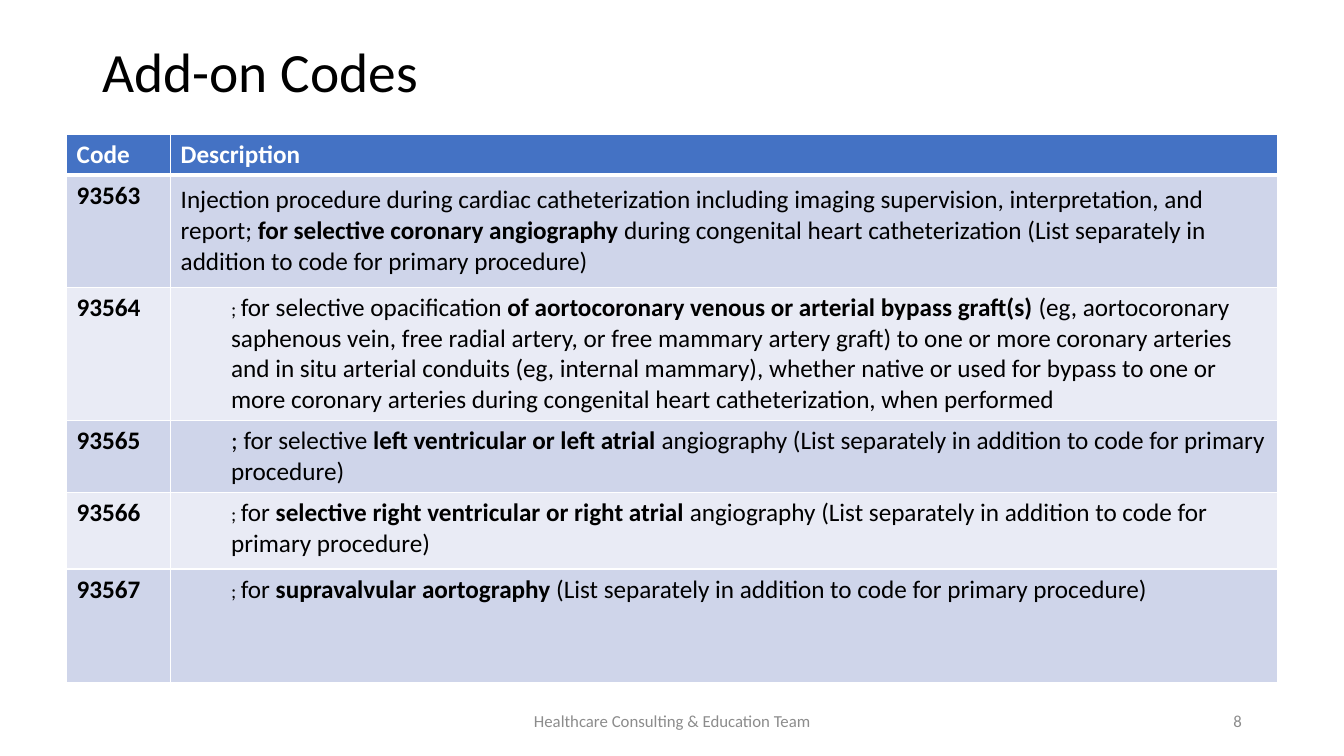
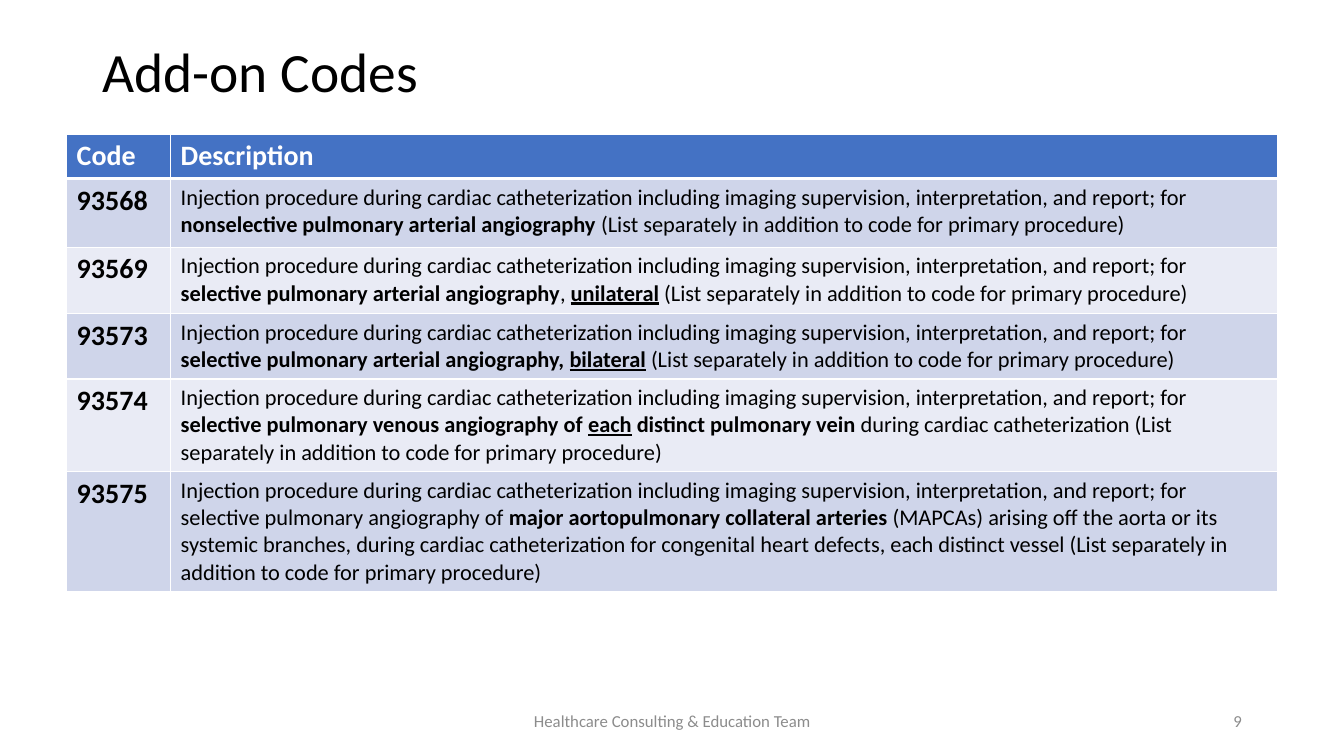
from dataclasses import dataclass

from lxml.etree import SubElement
from pptx import Presentation
from pptx.dml.color import RGBColor
from pptx.enum.text import MSO_ANCHOR, MSO_AUTO_SIZE, PP_ALIGN
from pptx.oxml.ns import qn
from pptx.slide import Slide
from pptx.table import _Cell
from pptx.text.text import _Paragraph
from pptx.util import Cm, Pt


@dataclass(frozen=True)
class Theme:
    font: str = "Calibri"
    ink: str = "000000"
    white: str = "FFFFFF"
    header: str = "4472C4"
    bands: tuple[str, str] = ("CFD5EA", "E9EBF5")
    muted: str = "8C8C8C"
    title_size: float = 39.6
    footer_size: float = 12
    separator_size: float = 14
    thin: float = 1
    thick: float = 3


@dataclass(frozen=True)
class Box:
    left: float
    top: float
    width: float
    height: float

    def lengths(self) -> tuple[Cm, Cm, Cm, Cm]:
        return Cm(self.left), Cm(self.top), Cm(self.width), Cm(self.height)


@dataclass(frozen=True)
class Phrase:
    text: str
    bold: bool = False
    underline: bool = False
    size: float | None = None


@dataclass(frozen=True)
class CodeEntry:
    code: str
    description: tuple[Phrase, ...]
    indent: float = 0
    padding: float = 0.13


@dataclass(frozen=True)
class CodePage:
    number: int
    code_size: float
    description_size: float
    entries: tuple[CodeEntry, ...]


THEME = Theme()

# Shared layout, in centimetres
SLIDE_WIDTH, SLIDE_HEIGHT = 33.87, 19.05
TITLE_BOX = Box(2.33, 1.02, 29.21, 1.7)
FOOTER_BOX = Box(11.23, 17.65, 11.43, 1.02)
NUMBER_BOX = Box(23.93, 17.65, 7.62, 1.02)
COLUMN_WIDTHS = (2.62, 27.89)
ROW_HEIGHTS = (0.97, 1.73, 1.68, 1.63, 1.93, 2.87)
TABLE_BOX = Box(1.68, 3.38, sum(COLUMN_WIDTHS), sum(ROW_HEIGHTS))
SUBENTRY_INDENT = 1.27

# Shared wording
TITLE = "Add-on Codes"
FOOTER = "Healthcare Consulting & Education Team"
HEADINGS = ("Code", "Description")
INJECTION = ("Injection procedure during cardiac catheterization including "
             "imaging supervision, interpretation, and report; ")
LISTED = "(List separately in addition to code for primary procedure)"
SEPARATOR = Phrase("; ", size=THEME.separator_size)


def subentry(code: str, *description: Phrase) -> CodeEntry:
    return CodeEntry(code, description, indent=SUBENTRY_INDENT)


def injection(code: str, lead: str, *description: Phrase) -> CodeEntry:
    return CodeEntry(code, (Phrase(INJECTION + lead), *description))


PAGES = (
    CodePage(8, 18, 18, (
        CodeEntry("93563", (
            Phrase(INJECTION),
            Phrase("for selective coronary angiography ", bold=True),
            Phrase("during congenital heart catheterization " + LISTED),
        ), padding=0.25),
        subentry(
            "93564", SEPARATOR, Phrase("for selective opacification "),
            Phrase("of aortocoronary venous or arterial bypass graft(s) ",
                   bold=True),
            Phrase("(eg, aortocoronary saphenous vein, free radial artery, or "
                   "free mammary artery graft) to one or more coronary "
                   "arteries and in situ arterial conduits (eg, internal "
                   "mammary), whether native or used for bypass to one or more "
                   "coronary arteries during congenital heart "
                   "catheterization, when performed")),
        subentry(
            "93565", Phrase("; for selective "),
            Phrase("left ventricular or left atrial ", bold=True),
            Phrase("angiography " + LISTED)),
        subentry(
            "93566", SEPARATOR, Phrase("for "),
            Phrase("selective right ventricular or right atrial ", bold=True),
            Phrase("angiography " + LISTED)),
        subentry(
            "93567", SEPARATOR, Phrase("for "),
            Phrase("supravalvular aortography ", bold=True), Phrase(LISTED)),
    )),
    CodePage(9, 20, 16, (
        injection(
            "93568", "for ",
            Phrase("nonselective pulmonary arterial angiography ", bold=True),
            Phrase(LISTED)),
        injection(
            "93569", "for ",
            Phrase("selective pulmonary arterial angiography", bold=True),
            Phrase(", "), Phrase("unilateral", bold=True, underline=True),
            Phrase(" " + LISTED)),
        injection(
            "93573", "for ",
            Phrase("selective pulmonary arterial angiography, ", bold=True),
            Phrase("bilateral", bold=True, underline=True),
            Phrase(" ", bold=True), Phrase(LISTED)),
        injection(
            "93574", "for ",
            Phrase("selective pulmonary venous angiography of ", bold=True),
            Phrase("each", bold=True, underline=True),
            Phrase(" distinct pulmonary vein ", bold=True),
            Phrase("during cardiac catheterization " + LISTED)),
        injection(
            "93575", "for selective pulmonary angiography of ",
            Phrase("major aortopulmonary collateral arteries ", bold=True),
            Phrase("(MAPCAs) arising off the aorta or its systemic branches, "
                   "during cardiac catheterization for congenital heart "
                   "defects, each distinct vessel " + LISTED)),
    )),
)


def write(paragraph: _Paragraph, text: str, *, size: float,
          color: str = THEME.ink, bold: bool = False,
          underline: bool = False) -> None:
    run = paragraph.add_run()
    run.text = text
    font = run.font
    font.name, font.size = THEME.font, Pt(size)
    font.bold, font.underline = bold, underline
    font.color.rgb = RGBColor.from_string(color)


def add_title(slide: Slide) -> None:
    title = slide.shapes.title
    title.left, title.top, title.width, title.height = TITLE_BOX.lengths()
    frame = title.text_frame
    frame.auto_size = MSO_AUTO_SIZE.NONE
    frame.vertical_anchor = MSO_ANCHOR.MIDDLE
    heading = frame.paragraphs[0]
    heading.alignment, heading.line_spacing = PP_ALIGN.LEFT, 0.9
    write(heading, TITLE, size=THEME.title_size)


def add_footer_text(slide: Slide, box: Box, text: str,
                    alignment: PP_ALIGN) -> None:
    frame = slide.shapes.add_textbox(*box.lengths()).text_frame
    frame.word_wrap = True
    frame.vertical_anchor = MSO_ANCHOR.MIDDLE
    line = frame.paragraphs[0]
    line.alignment = alignment
    write(line, text, size=THEME.footer_size, color=THEME.muted)


def style_cell(cell: _Cell, fill: str, *, top: float = THEME.thin,
               bottom: float = THEME.thin) -> None:
    # Borders come before the fill in the cell properties
    properties = cell._tc.get_or_add_tcPr()
    widths = {"L": THEME.thin, "R": THEME.thin, "T": top, "B": bottom}
    for side, width in widths.items():
        border = SubElement(properties, qn(f"a:ln{side}"), w=str(Pt(width)))
        solid = SubElement(border, qn("a:solidFill"))
        SubElement(solid, qn("a:srgbClr"), val=THEME.white)
    cell.fill.solid()
    cell.fill.fore_color.rgb = RGBColor.from_string(fill)


def fill_description(cell: _Cell, entry: CodeEntry, size: float) -> None:
    cell.margin_top = cell.margin_bottom = Cm(entry.padding)
    paragraph = cell.text_frame.paragraphs[0]
    if entry.indent:
        paragraph.level = 1
        properties = paragraph._p.get_or_add_pPr()
        properties.set("marL", str(Cm(entry.indent)))
        properties.set("indent", "0")
    for phrase in entry.description:
        write(paragraph, phrase.text, size=phrase.size or size,
              bold=phrase.bold, underline=phrase.underline)


def add_code_table(slide: Slide, page: CodePage) -> None:
    table = slide.shapes.add_table(
        len(ROW_HEIGHTS), len(COLUMN_WIDTHS), *TABLE_BOX.lengths()).table
    for column, width in zip(table.columns, COLUMN_WIDTHS):
        column.width = Cm(width)
    for row, height in zip(table.rows, ROW_HEIGHTS):
        row.height = Cm(height)

    # Header row
    for cell, heading in zip(table.rows[0].cells, HEADINGS):
        style_cell(cell, THEME.header, bottom=THEME.thick)
        write(cell.text_frame.paragraphs[0], heading, size=page.code_size,
              color=THEME.white, bold=True)

    # One banded row per code
    for index, entry in enumerate(page.entries):
        code_cell, description_cell = table.rows[index + 1].cells
        for cell in (code_cell, description_cell):
            style_cell(cell, THEME.bands[index % 2],
                       top=THEME.thin if index else THEME.thick)
        write(code_cell.text_frame.paragraphs[0], entry.code,
              size=page.code_size, bold=True)
        fill_description(description_cell, entry, page.description_size)


def main() -> None:
    deck = Presentation()
    deck.slide_width, deck.slide_height = Cm(SLIDE_WIDTH), Cm(SLIDE_HEIGHT)
    title_only = deck.slide_layouts[5]
    for page in PAGES:
        slide = deck.slides.add_slide(title_only)
        add_title(slide)
        add_code_table(slide, page)
        add_footer_text(slide, FOOTER_BOX, FOOTER, PP_ALIGN.CENTER)
        add_footer_text(slide, NUMBER_BOX, str(page.number), PP_ALIGN.RIGHT)
    deck.save("out.pptx")


if __name__ == "__main__":
    main()
